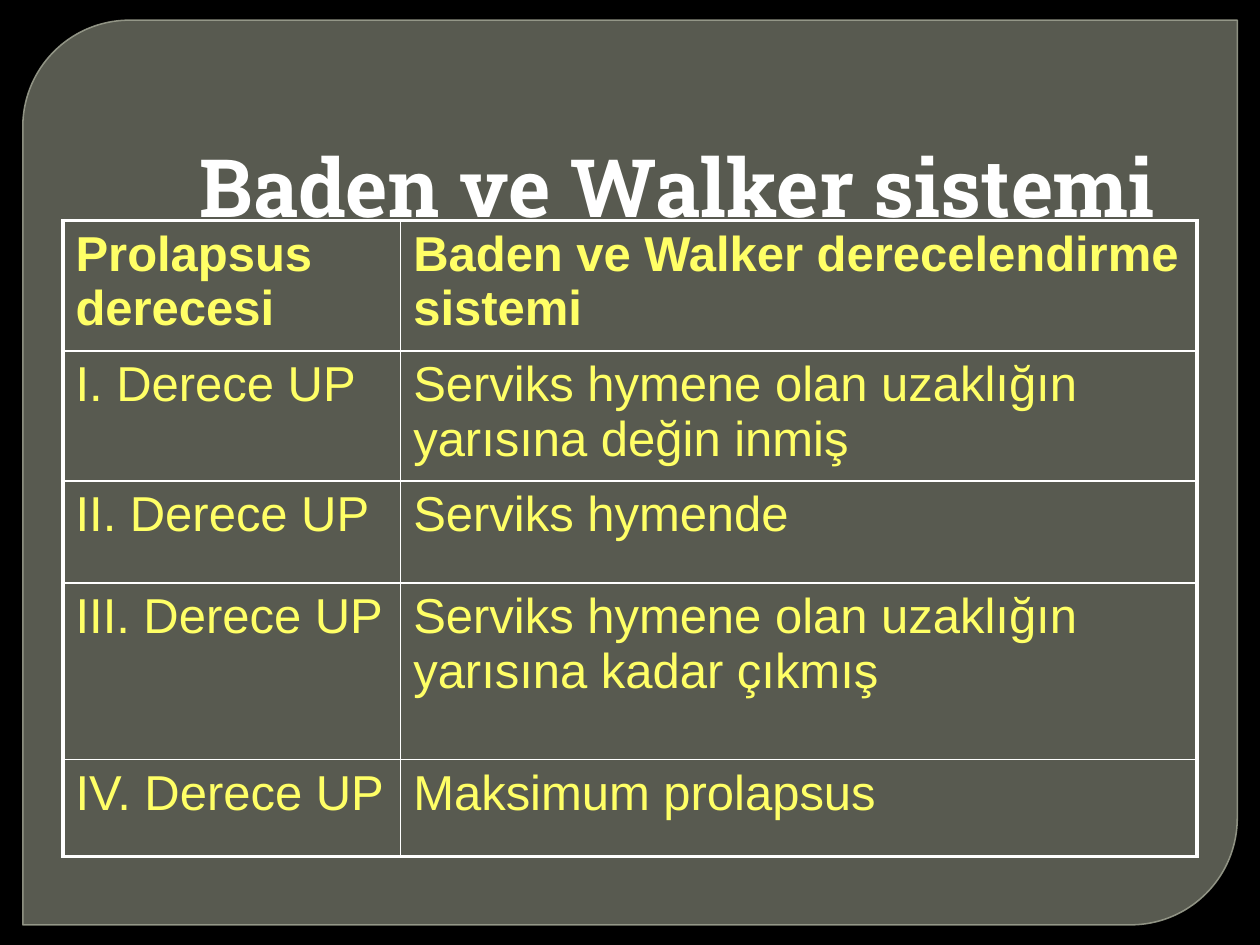
from lxml import etree
from pptx import Presentation
from pptx.dml.color import RGBColor
from pptx.enum import shapes, text
from pptx.oxml.ns import qn
from pptx.util import Pt

COLORS = {"page": "000000", "panel": "888B7B", "edge": "9DA090",
          "title": "FFFFFF", "grid": "FFFFFF", "body": "FFFF66"}
ROWS = [
    ("Prolapsus derecesi", "Baden ve Walker derecelendirme sistemi"),
    ("I. Derece UP", "Serviks hymene olan uzaklığın yarısına değin inmiş"),
    ("II. Derece UP", "Serviks hymende"),
    ("III. Derece UP", "Serviks hymene olan uzaklığın yarısına kadar çıkmış"),
    ("IV. Derece UP", "Maksimum prolapsus"),
]
COLUMN_WIDTHS = [193, 455]
ROW_HEIGHTS = [69, 69, 58.3, 100.8, 55.4]


class SlideBuilder:
    """Hold the slide style and draw each kind of element, in points."""

    def __init__(self, deck):
        self.page = deck.slides.add_slide(deck.slide_layouts[6])
        fill = self.page.background.fill
        fill.solid()
        fill.fore_color.rgb = self.color("page")

    def color(self, name):
        return RGBColor.from_string(COLORS[name])

    def set_alpha(self, paint, percent):
        value = paint.find(".//" + qn("a:srgbClr"))
        etree.SubElement(value, qn("a:alpha"), val=str(percent * 1000))

    def style_text(self, para, name, size, color, bold):
        para.font.name = name
        para.font.size = Pt(size)
        para.font.bold = bold
        para.font.color.rgb = self.color(color)

    def panel(self, left, top, width, height):
        panel = self.page.shapes.add_shape(
            shapes.MSO_SHAPE.ROUND_2_DIAG_RECTANGLE,
            Pt(left), Pt(top), Pt(width), Pt(height))
        panel.shadow.inherit = False
        panel.adjustments[0] = 0.118
        panel.adjustments[1] = 0
        panel.fill.solid()
        panel.fill.fore_color.rgb = self.color("panel")
        panel.line.color.rgb = self.color("edge")
        panel.line.width = Pt(0.87)
        properties = panel.element.spPr
        self.set_alpha(properties.find(qn("a:solidFill")), 65)
        self.set_alpha(properties.find(qn("a:ln")), 88)

    def title(self, words, left, top, width, height):
        box = self.page.shapes.add_textbox(Pt(left), Pt(top), Pt(width), Pt(height))
        frame = box.text_frame
        frame.word_wrap = True
        frame.vertical_anchor = text.MSO_ANCHOR.BOTTOM
        para = frame.paragraphs[0]
        para.text = words
        para.alignment = text.PP_ALIGN.RIGHT
        self.style_text(para, "Roboto Slab", 46, "title", True)

    def border(self, cell, side, width):
        line = etree.SubElement(cell._tc.get_or_add_tcPr(), qn("a:ln" + side),
                                w=str(int(Pt(width))))
        paint = etree.SubElement(line, qn("a:solidFill"))
        etree.SubElement(paint, qn("a:srgbClr"), val=COLORS["grid"])

    def table(self, rows, left, top, widths, heights):
        table = self.page.shapes.add_table(
            len(rows), len(widths), Pt(left), Pt(top),
            Pt(sum(widths)), Pt(sum(heights))).table
        table.horz_banding = False
        for column, width in zip(table.columns, widths):
            column.width = Pt(width)
        for r, (height, words) in enumerate(zip(heights, rows)):
            table.rows[r].height = Pt(height)
            for c, label in enumerate(words):
                cell = table.cell(r, c)
                outer = {"L": c == 0, "R": c == len(widths) - 1,
                         "T": r == 0, "B": r == len(rows) - 1}
                for side, is_outer in outer.items():
                    self.border(cell, side, 2.25 if is_outer else 1)
                cell.fill.background()
                para = cell.text_frame.paragraphs[0]
                para.text = label
                self.style_text(para, "Arial", 28, "body", r == 0)


def main():
    deck = Presentation()
    deck.slide_width, deck.slide_height = Pt(720), Pt(540)
    slide = SlideBuilder(deck)
    slide.panel(13, 11.5, 694, 517)
    slide.title("Baden ve Walker sistemi ", 84, 24, 594, 113)
    slide.table(ROWS, 36, 126, COLUMN_WIDTHS, ROW_HEIGHTS)
    deck.save("out.pptx")


if __name__ == "__main__":
    main()
